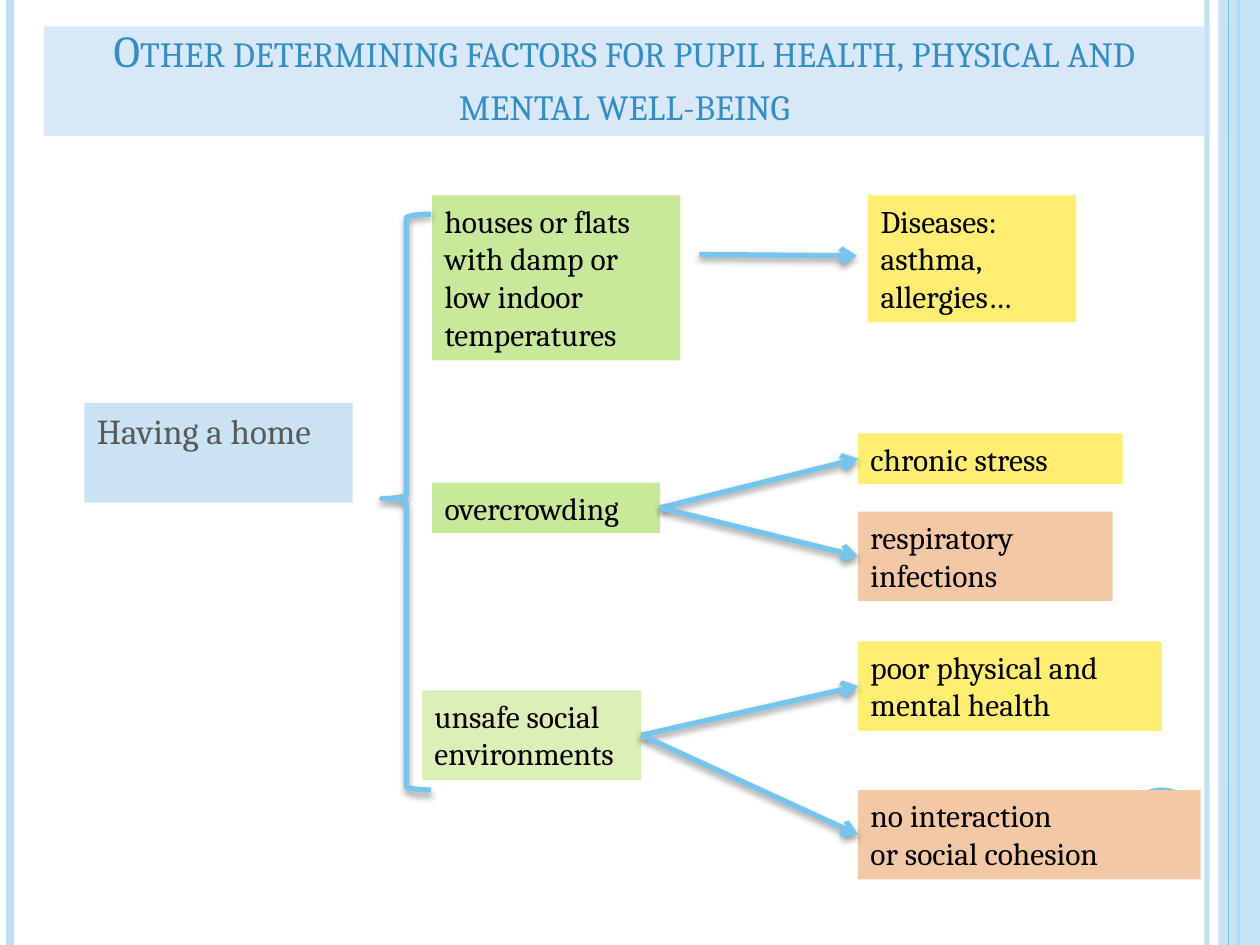
from lxml.etree import SubElement
from pptx import Presentation
from pptx.dml.color import RGBColor
from pptx.enum.shapes import MSO_CONNECTOR, MSO_SHAPE
from pptx.enum.text import MSO_ANCHOR, MSO_AUTO_SIZE, PP_ALIGN
from pptx.oxml.ns import qn
from pptx.util import Inches, Pt

COLS, ROWS = 100, 75
FONT = "Cambria"
SKY = RGBColor(0x76, 0xC5, 0xEF)
PALE_SKY = RGBColor(0xBD, 0xDF, 0xF6)
TITLE_FILL = RGBColor(0xD9, 0xE8, 0xF9)
TITLE_TEXT = RGBColor(0x31, 0x8F, 0xC5)
HOME_FILL = RGBColor(0xCA, 0xE3, 0xF2)
GREY = RGBColor(0x59, 0x59, 0x59)
BLACK = RGBColor(0, 0, 0)
GREEN = RGBColor(0xC8, 0xE8, 0x9A)
PALE_GREEN = RGBColor(0xDB, 0xEF, 0xB6)
YELLOW = RGBColor(0xFF, 0xEE, 0x70)
PEACH = RGBColor(0xF3, 0xC8, 0xA5)


def grid(*cells):
    """Turn counts of grid columns or rows into lengths."""
    return [Inches(cell / 10) for cell in cells]


def set_alpha(fill_parent, percent):
    """Make the solid colour below an element partly transparent."""
    color = next(fill_parent.iter(qn("a:srgbClr")))
    SubElement(color, qn("a:alpha"), val=str(percent * 1000))


def set_effects(sp, shadow):
    """Replace the theme shadow with a soft drop shadow or with none."""
    effects = SubElement(sp._element.spPr, qn("a:effectLst"))
    if shadow:
        outer = SubElement(effects, qn("a:outerShdw"), blurRad=str(Pt(4)),
                           dist=str(Pt(2)), dir="5400000", rotWithShape="0")
        color = SubElement(outer, qn("a:srgbClr"), val=str(BLACK))
        SubElement(color, qn("a:alpha"), val="40000")


def add_line(s, start, end, color=SKY, width=3, shadow=False):
    """Add a straight line between two grid points."""
    sp = s.shapes.add_connector(MSO_CONNECTOR.STRAIGHT, *grid(*start, *end))
    sp.line.color.rgb = color
    sp.line.width = Pt(width)
    set_effects(sp, shadow)
    return sp


def add_arrow(s, start=(0, 0), end=(0, 0), source=None, target=None):
    """Add a shadowed arrow between grid points or between two boxes."""
    sp = add_line(s, start, end, shadow=True)
    if source is not None:
        sp.begin_connect(source, 3)
        sp.end_connect(target, 1)
    SubElement(sp.line._get_or_add_ln(), qn("a:tailEnd"), type="arrow")


def add_solid(s, kind, place, color):
    """Add a flat preset shape without an outline."""
    sp = s.shapes.add_shape(kind, *grid(*place))
    sp.fill.solid()
    sp.fill.fore_color.rgb = color
    sp.line.fill.background()
    set_effects(sp, False)
    return sp


def add_box(s, lines, place, fill, size=18, color=BLACK):
    """Add a filled text box with one paragraph for each line."""
    sp = s.shapes.add_textbox(*grid(*place))
    sp.fill.solid()
    sp.fill.fore_color.rgb = fill
    tf = sp.text_frame
    tf.word_wrap = True
    tf.text = "\n".join(lines)
    for p in tf.paragraphs:
        p.font.name = FONT
        p.font.size = Pt(size)
        p.font.color.rgb = color
    return sp


def add_side_bands(s):
    """Draw the bands at the slide edges and the disc at lower right."""
    for x, color, width, alpha in ((95.8, PALE_SKY, 3, 93), (0.8, PALE_SKY, 4.5, 100),
                                   (98.3, SKY, 1.5, 100)):
        sp = add_line(s, (x, 0), (x, ROWS), color, width)
        set_alpha(sp.line._get_or_add_ln(), alpha)
    band = add_solid(s, MSO_SHAPE.RECTANGLE, (96.7, 0, 3.3, ROWS), PALE_SKY)
    set_alpha(band._element.spPr, 87)
    add_line(s, (97.5, 0), (97.5, ROWS), SKY, 0.75)
    add_solid(s, MSO_SHAPE.OVAL, (89.2, 62.5, 6, 6), SKY)


def set_title(s, text):
    """Place and format the title in small capitals."""
    sp = s.shapes.title
    sp.left, sp.top, sp.width, sp.height = grid(3.5, 2.1, 92.1, 8.7)
    sp.fill.solid()
    sp.fill.fore_color.rgb = TITLE_FILL
    tf = sp.text_frame
    tf.text = text
    tf.word_wrap = True
    tf.auto_size = MSO_AUTO_SIZE.NONE
    tf.vertical_anchor = MSO_ANCHOR.BOTTOM
    p = tf.paragraphs[0]
    p.alignment = PP_ALIGN.CENTER
    r = p.runs[0]
    r.font.name = FONT
    r.font.size = Pt(25.2)
    r.font.color.rgb = TITLE_TEXT
    r._r.get_or_add_rPr().set("cap", "small")


def add_brace(s, place):
    """Add the brace that groups the housing factors."""
    sp = s.shapes.add_shape(MSO_SHAPE.LEFT_BRACE, *grid(*place))
    sp.adjustments[0], sp.adjustments[1] = 0.083, 0.494
    sp.fill.background()
    sp.line.color.rgb = SKY
    sp.line.width = Pt(3)
    set_effects(sp, True)


def main():
    """Build and save the slide."""
    prs = Presentation()
    prs.slide_width, prs.slide_height = grid(COLS, ROWS)
    s = prs.slides.add_slide(prs.slide_layouts[5])
    add_side_bands(s)
    set_title(s, "Other determining factors for pupil health, physical and mental well-being")

    add_box(s, ["Having a home"], (6.7, 32, 21.3, 7.9), HOME_FILL, 20, GREY)
    add_box(s, ["houses or flats", "with damp or", "low indoor", "temperatures"],
            (34.3, 15.5, 19.7, 13.1), GREEN)
    add_box(s, ["Diseases:", "asthma, allergies…"], (68.9, 15.5, 16.5, 10.1), YELLOW)
    crowding = add_box(s, ["overcrowding"], (34.3, 38.3, 18.1, 4), GREEN)
    stress = add_box(s, ["chronic stress"], (68.1, 34.4, 21, 4), YELLOW)
    infections = add_box(s, ["respiratory infections"], (68.1, 40.6, 20.2, 7.1), PEACH)
    unsafe = add_box(s, ["unsafe social", "environments"], (33.5, 54.8, 17.4, 7.1), PALE_GREEN)
    health = add_box(s, ["poor physical and mental health"], (68.1, 50.9, 24.1, 7.1), YELLOW)
    isolation = add_box(s, ["no interaction", "or social cohesion"],
                        (68.1, 62.7, 27.2, 7.1), PEACH)

    add_brace(s, (30.3, 17, 3.9, 45.7))
    add_arrow(s, (55.5, 20.2), (68, 20.3))
    for source, targets in ((crowding, (stress, infections)), (unsafe, (health, isolation))):
        for target in targets:
            add_arrow(s, source=source, target=target)
    prs.save("out.pptx")


if __name__ == "__main__":
    main()
